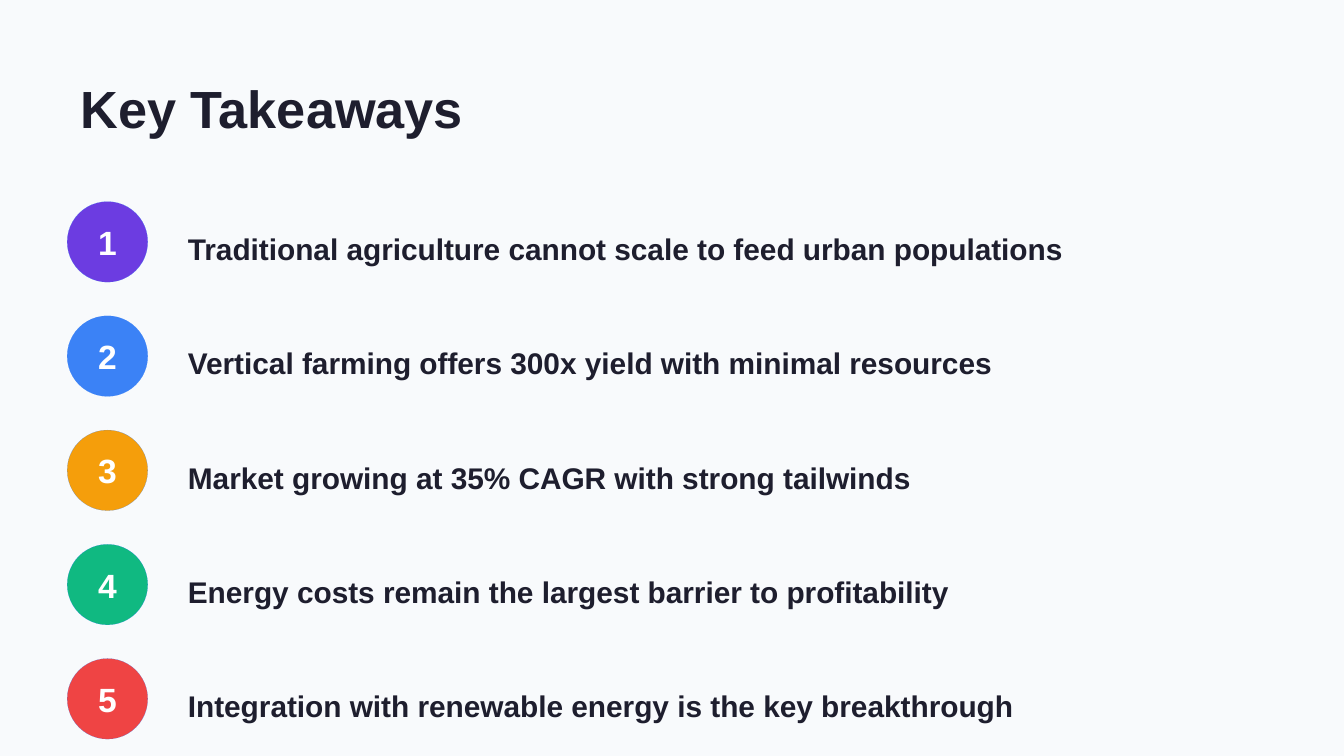
import pptx
import pptx.util
import pptx.dml.color
import pptx.enum.shapes
import pptx.enum.text

Inches = pptx.util.Inches
Pt = pptx.util.Pt
RGB = pptx.dml.color.RGBColor
ALIGN = pptx.enum.text.PP_ALIGN

PAPER = RGB(0xF8, 0xFA, 0xFC)
INK = RGB(0x1E, 0x1E, 0x2E)
WHITE = RGB(0xFF, 0xFF, 0xFF)
VIOLET = RGB(0x6C, 0x3C, 0xE1)
BLUE = RGB(0x3B, 0x82, 0xF6)
AMBER = RGB(0xF5, 0x9E, 0x0B)
GREEN = RGB(0x10, 0xB9, 0x81)
RED = RGB(0xEF, 0x44, 0x44)

POINTS = [
    (VIOLET, "Traditional agriculture cannot scale to feed urban populations"),
    (BLUE, "Vertical farming offers 300x yield with minimal resources"),
    (AMBER, "Market growing at 35% CAGR with strong tailwinds"),
    (GREEN, "Energy costs remain the largest barrier to profitability"),
    (RED, "Integration with renewable energy is the key breakthrough"),
]
TOP, STEP, SIZE = 1.5, 0.85, 0.6


def write(shape, text, size=16, color=INK, align=ALIGN.LEFT):
    """Fill a shape with one bold, vertically centred line of text."""
    frame = shape.text_frame
    frame.word_wrap = True
    frame.auto_size = pptx.enum.text.MSO_AUTO_SIZE.NONE
    frame.vertical_anchor = pptx.enum.text.MSO_ANCHOR.MIDDLE
    para = frame.paragraphs[0]
    para.alignment = align
    run = para.add_run()
    run.text = text
    run.font.name = "Arial"
    run.font.size = Pt(size)
    run.font.bold = True
    run.font.color.rgb = color


deck = pptx.Presentation()
deck.slide_width = Inches(10)
deck.slide_height = Inches(10) * 9 // 16
slide = deck.slides.add_slide(deck.slide_layouts.get_by_name("Title Only"))
slide.background.fill.solid()
slide.background.fill.fore_color.rgb = PAPER

title = slide.shapes.title
title.left, title.top = Inches(0.5), Inches(0.3)
title.width, title.height = Inches(9), Inches(1)
write(title, "Key Takeaways", size=28)

for i, (color, text) in enumerate(POINTS):
    top = TOP + i * STEP
    badge = slide.shapes.add_shape(
        pptx.enum.shapes.MSO_SHAPE.OVAL,
        Inches(0.5), Inches(top), Inches(SIZE), Inches(SIZE))
    badge.shadow.inherit = False
    badge.fill.solid()
    badge.fill.fore_color.rgb = color
    badge.line.color.rgb = BLUE
    badge.line.width = Pt(0.02)
    badge.text_frame.margin_left = badge.text_frame.margin_right = 0
    write(badge, str(i + 1), size=18, color=WHITE, align=ALIGN.CENTER)

    label = slide.shapes.add_textbox(
        Inches(1.3), Inches(top + 0.1), Inches(7), Inches(0.5))
    write(label, text)

deck.save("out.pptx")
